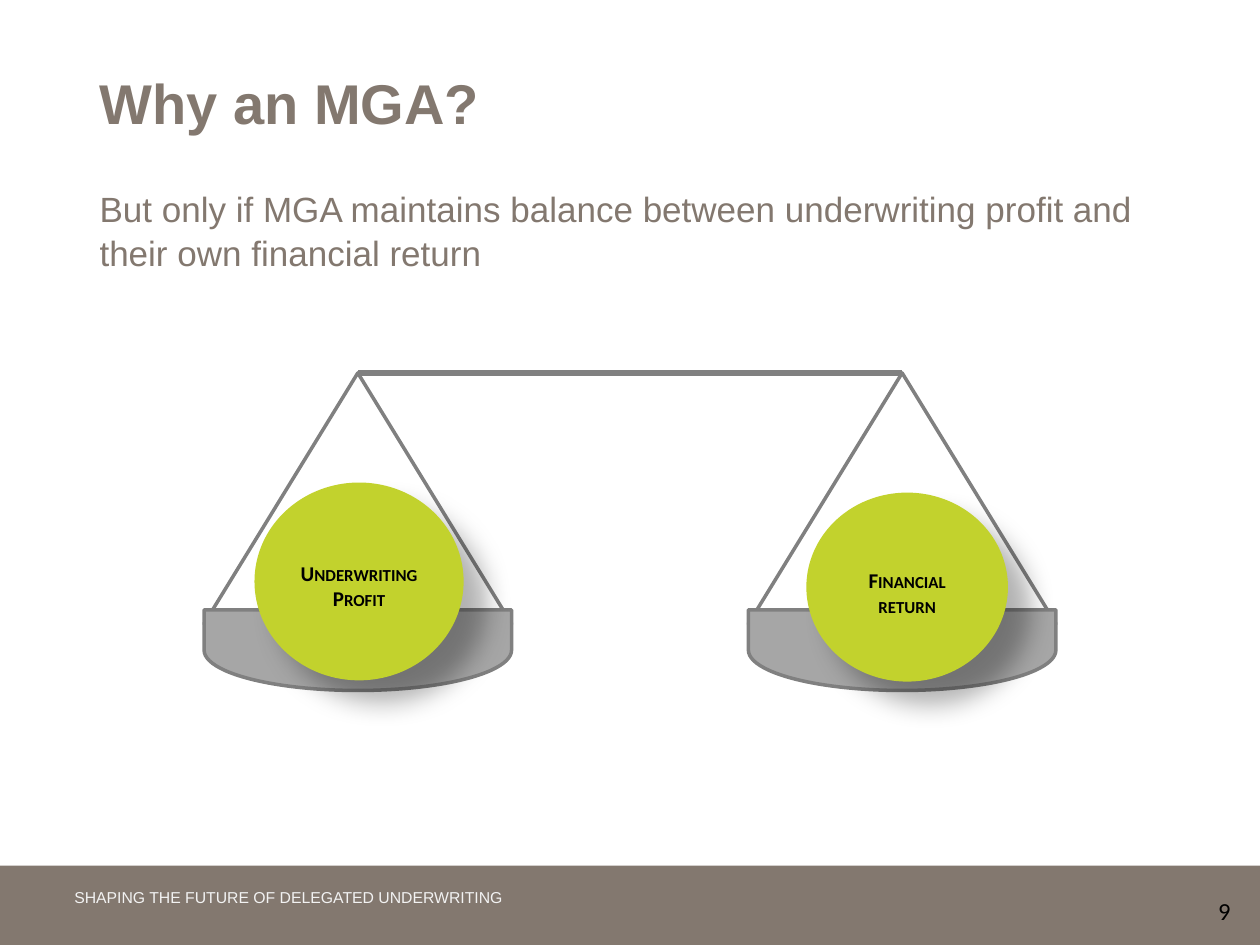
from lxml import etree
from pptx import Presentation
from pptx.dml.color import RGBColor
from pptx.enum.shapes import MSO_CONNECTOR as Connector, MSO_SHAPE as Shape
from pptx.enum.text import MSO_ANCHOR as Anchor, PP_ALIGN as Align
from pptx.oxml.ns import qn
from pptx.util import Inches, Pt

# Content
TITLE = "Why an MGA?"
MESSAGE = ("But only if MGA maintains balance between underwriting profit "
           "and their own financial return")
FOOTER = "SHAPING THE FUTURE OF DELEGATED UNDERWRITING"
PAGE_NUMBER = "9"
# Each side of the scales: centre of the pan, ball label, ball box, text top inset
SIDES = [
    {"center": 7.16, "label": "Financial return",
     "ball": (6.4, 3.91, 1.6, 1.5), "top": 0.14},
    {"center": 2.84, "label": "Underwriting Profit",
     "ball": (2.02, 3.83, 1.66, 1.57), "top": 0.12},
]
BEAM_Y = 2.96
CORD_W, CORD_H = 2.44, 1.99
PAN_DEPTH, PAN_TOP = 0.64, 4.84

THEME = {
    "brown": "83786F", "pale": "F2F2F2", "black": "000000",
    "frame": "808080", "pan": "A6A6A6", "ball": "C2D22D",
    "title": {"name": "Arial", "size": Pt(32), "bold": True},
    "message": {"name": "Arial", "size": Pt(20), "bold": False},
    "footer": {"name": "Arial", "size": Pt(9)},
    "label": {"name": "Calibri", "size": Pt(12), "bold": True},
    "number": {"name": "Calibri", "size": Pt(14)},
}


def rgb(name):
    return RGBColor.from_string(THEME[name])


def set_box(shape, left, top, width, height):
    for key, value in zip(("left", "top", "width", "height"),
                          (left, top, width, height)):
        setattr(shape, key, Inches(value))


def write(shape, text, style, color, insets, align=Align.LEFT,
          anchor=Anchor.TOP, wrap=True):
    frame = shape.text_frame
    frame.text = text
    frame.word_wrap = wrap
    frame.vertical_anchor = anchor
    for side, value in zip(("left", "top", "right", "bottom"), insets):
        setattr(frame, f"margin_{side}", Inches(value))
    para = frame.paragraphs[0]
    para.alignment = align
    span = para.runs[0]
    for key, value in THEME[style].items():
        setattr(span.font, key, value)
    span.font.color.rgb = rgb(color)
    return para


def add_shape(page, kind, box, fill=None, line=None):
    shape = page.shapes.add_shape(kind, *map(Inches, box))
    shape.shadow.inherit = False
    if fill:
        shape.fill.solid()
        shape.fill.fore_color.rgb = rgb(fill)
    else:
        shape.fill.background()
    if line:
        shape.line.color.rgb = rgb(line)
        shape.line.width = Pt(2)
    else:
        shape.line.fill.background()
    return shape


def add_soft_shadow(shape):
    effects = shape._element.spPr.find(qn("a:effectLst"))
    shadow = etree.SubElement(effects, qn("a:outerShdw"), blurRad=str(Pt(15)),
                              dist=str(Pt(18)), dir=str(45 * 60000),
                              algn="tl", rotWithShape="0")
    color = etree.SubElement(shadow, qn("a:srgbClr"), val=THEME["black"])
    etree.SubElement(color, qn("a:alpha"), val="30000")


def add_pan(page, center):
    add_shape(page, Shape.ISOSCELES_TRIANGLE,
              (center - CORD_W / 2, BEAM_Y, CORD_W, CORD_H), line="frame")
    # The pan is a delay symbol turned so that its flat side faces up
    middle = PAN_TOP + PAN_DEPTH / 2
    pan = add_shape(page, Shape.FLOWCHART_DELAY,
                    (center - PAN_DEPTH / 2, middle - CORD_W / 2,
                     PAN_DEPTH, CORD_W), "pan", "frame")
    pan.rotation = 90


def add_ball(page, side):
    ball = add_shape(page, Shape.OVAL, side["ball"], "ball")
    add_soft_shadow(ball)
    para = write(ball, side["label"], "label", "black",
                 (0.08, side["top"], 0.08, 0.05), Align.CENTER, Anchor.MIDDLE)
    para.runs[0].font._element.set("cap", "small")


def main():
    deck = Presentation()
    deck.slide_width, deck.slide_height = Inches(10), Inches(7.5)
    page = deck.slides.add_slide(deck.slide_layouts[1])

    # Footer bar
    add_shape(page, Shape.RECTANGLE, (0, 6.87, 10, 0.63), "brown")

    # Title and message
    title, body = page.shapes.title, page.placeholders[1]
    set_box(title, 0.59, 0.44, 7.05, 0.79)
    write(title, TITLE, "title", "brown", (0.2, 0.1, 0.1, 0.05))
    set_box(body, 0.59, 1.47, 8.82, 0.72)
    para = write(body, MESSAGE, "message", "brown", (0.2, 0, 0, 0))
    props = para._p.get_or_add_pPr()
    props.set("marL", "0")
    props.set("indent", "0")
    etree.SubElement(props, qn("a:buNone"))
    para.space_before = Pt(0)
    para.line_spacing = 1.05

    # Scales: pans first, then the balls, then the beam
    for side in SIDES:
        add_pan(page, side["center"])
    for side in SIDES:
        add_ball(page, side)
    right, left = (Inches(side["center"]) for side in SIDES)
    beam = page.shapes.add_connector(Connector.STRAIGHT, left, Inches(BEAM_Y),
                                     right, Inches(BEAM_Y))
    beam.line.color.rgb = rgb("frame")
    beam.line.width = Pt(3)
    etree.SubElement(beam._element.spPr, qn("a:effectLst"))

    # Footer text and page number
    footer = page.shapes.add_textbox(*map(Inches, (0.47, 6.97, 9.06, 0.39)))
    write(footer, FOOTER, "footer", "pale", (0.12, 0.08, 0.08, 0.08))
    number = page.shapes.add_textbox(*map(Inches, (9.57, 7.06, 0.47, 0.34)))
    write(number, PAGE_NUMBER, "number", "black", (0.1, 0.05, 0.1, 0.05))

    deck.save("out.pptx")


if __name__ == "__main__":
    main()
